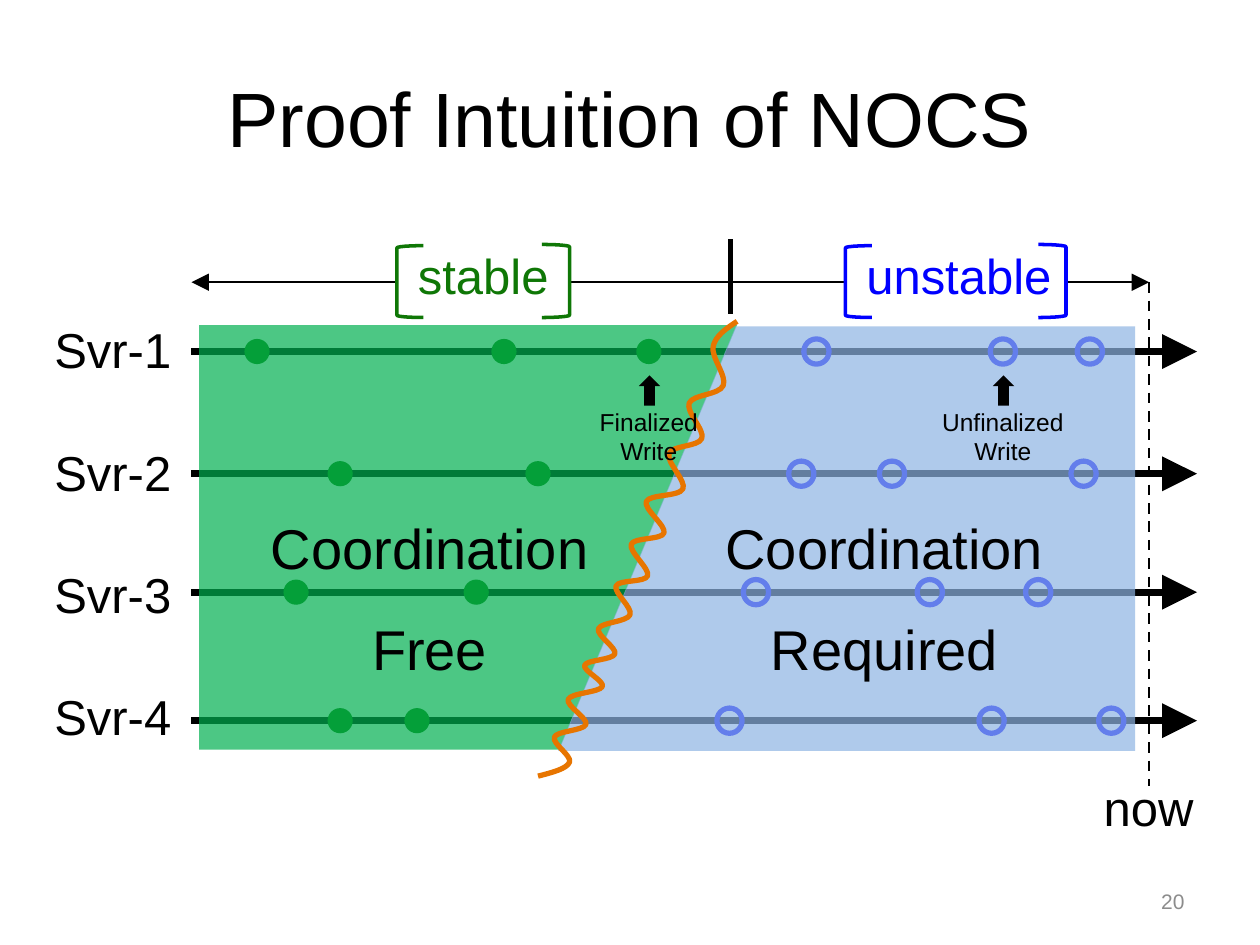
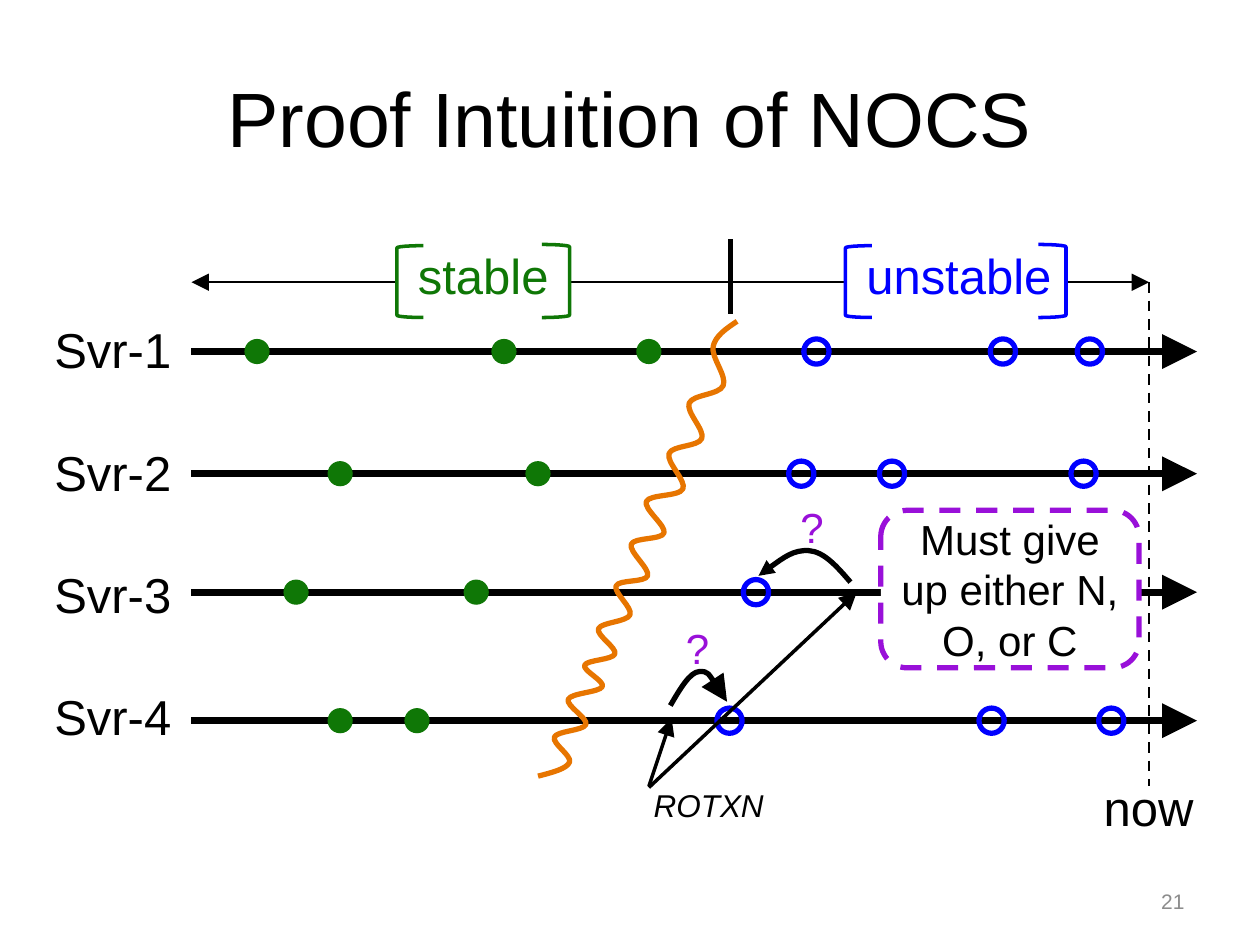
"""Build two slides on the intuition behind the NOCS proof."""
from pptx import Presentation
from pptx.dml import color as col
from pptx.enum import dml, shapes, text
from pptx.oxml import ns
from pptx.util import Pt
from lxml import etree

PX = 9144
FONT = "Arial"
BLACK, WHITE, GREY = "000000", "FFFFFF", "8C8C8C"
GREEN, BLUE, ORANGE, PURPLE = "0F7706", "0000FF", "E77500", "9910D9"
MINT, SKY = "00B050", "8EB4E3"

KIND = shapes.MSO_SHAPE
MID = text.PP_ALIGN.CENTER

ROWS = [279, 376, 470, 572]
DONE = [[204, 400, 515], [270, 427], [235, 378], [270, 331]]
OPEN = [[648, 796, 865], [636, 708, 860], [600, 738, 824], [579, 787, 882]]
WAVE = [(585, 255), (566, 275), (574, 306), (547, 320), (557, 348),
        (531, 360), (542, 388), (513, 398), (527, 423), (501, 432),
        (514, 457), (489, 465), (500, 488), (475, 499), (488, 519),
        (464, 528), (478, 545), (451, 555), (465, 575), (440, 585),
        (452, 605), (427, 616)]


def px(*nums):
    """Turn px lengths into EMU."""
    return [round(n * PX) for n in nums]


def rgb(code):
    """Turn a hex string into a colour."""
    return col.RGBColor.from_string(code)


def sub(node, tag, **attrs):
    """Add a child element with attributes."""
    return etree.SubElement(node, ns.qn(tag), attrs)


def ink(line, code, width, dash=False):
    """Style an outline or a connector line."""
    line.color.rgb = rgb(code)
    line.width = Pt(width)
    if dash:
        line.dash_style = dml.MSO_LINE.DASH


def tip(shape, size):
    """Put a triangle at the far end of a line."""
    line = shape._element.spPr.find(ns.qn("a:ln"))
    sub(line, "a:tailEnd", type="triangle", w=size, len=size)


def paint(shape, fill=None, edge=None, width=3, dash=False):
    """Give a shape its fill and outline, and drop the shadow."""
    shape.shadow.inherit = False
    if fill:
        shape.fill.solid()
        shape.fill.fore_color.rgb = rgb(fill)
    else:
        shape.fill.background()
    if edge:
        ink(shape.line, edge, width, dash)
    else:
        shape.line.fill.background()
    return shape


def form(slide, kind, box, **look):
    """Draw a preset shape."""
    return paint(slide.shapes.add_shape(kind, *px(*box)), **look)


def write(frame, words, size, code=BLACK, align=MID):
    """Fill a text frame with one paragraph per line of words."""
    frame.text = words
    for para in frame.paragraphs:
        para.alignment = align
        para.font.name = FONT
        para.font.size = Pt(size)
        para.font.color.rgb = rgb(code)


def label(slide, words, box, size=28, code=BLACK, wrap=False, align=MID):
    """Add a text box."""
    frame = slide.shapes.add_textbox(*px(*box)).text_frame
    frame.word_wrap = wrap
    write(frame, words, size, code, align)
    return frame


def rule(slide, ends, width, head=False, dash=False):
    """Draw a straight line, with an arrowhead if asked."""
    link = slide.shapes.add_connector(shapes.MSO_CONNECTOR.STRAIGHT, *px(*ends))
    ink(link.line, BLACK, width, dash)
    if head:
        tip(link, "lg")
    sub(link._element.spPr, "a:effectLst")


def trace(slide, spots, close):
    """Join spots into a freeform."""
    pen = slide.shapes.build_freeform(*px(*spots[0]), scale=1.0)
    pen.add_line_segments([px(*spot) for spot in spots[1:]], close=close)
    return pen.convert_to_shape()


def zone(slide, spots, fill):
    """Draw a see-through area."""
    area = paint(trace(slide, spots, True), fill)
    tint = area._element.spPr.find(ns.qn("a:solidFill"))[0]
    sub(tint, "a:alpha", val="70000")


def bend(spots):
    """Give the control and end points of a smooth curve through spots."""
    last = len(spots) - 1
    slope = [[(b - a) / 6 for a, b in zip(spots[i - 1], spots[i + 1])]
             for i in range(1, last)]
    parts = []
    for i in range(last):
        one = [p + s for p, s in zip(spots[i], slope[i - 1])]
        two = [p - s for p, s in zip(spots[i + 1], slope[min(i, last - 2)])]
        if i == 0:
            one = [(p + q) / 2 for p, q in zip(spots[0], two)]
        if i == last - 1:
            two = [(p + q) / 2 for p, q in zip(spots[last], one)]
        parts.append((one, two, spots[i + 1]))
    return parts


def curve(slide, spots, code=BLACK, head=None):
    """Draw a smooth curve through spots."""
    shape = paint(trace(slide, spots, False), edge=code)
    steps = list(shape._element.iter(ns.qn("a:lnTo")))
    for step, part in zip(steps, bend(spots)):
        arc = etree.Element(ns.qn("a:cubicBezTo"))
        for spot in part:
            x, y = px(*spot)
            sub(arc, "a:pt", x=str(x - shape.left), y=str(y - shape.top))
        step.getparent().replace(step, arc)
    if head:
        tip(shape, head)


def dots(slide, rows, **look):
    """Draw the writes of each server as circles."""
    for y, row in zip(ROWS, rows):
        for x in row:
            form(slide, KIND.OVAL, (x - 10, y - 10, 20, 20), **look)


def phase(slide, words, code, left, right, box):
    """Write a phase name between brackets."""
    label(slide, words, box, code=code)
    form(slide, KIND.LEFT_BRACKET, (left, 195, 21, 57), edge=code, width=2)
    form(slide, KIND.RIGHT_BRACKET, (right - 22, 194, 22, 58), edge=code, width=2)


def base(deck, num, late):
    """Add a slide with title, number, servers, time line and writes."""
    slide = deck.slides.add_slide(deck.slide_layouts[5])
    title = slide.shapes.title
    title.left, title.top, title.width, title.height = px(50, 30, 900, 125)
    title.text_frame.vertical_anchor = text.MSO_ANCHOR.MIDDLE
    write(title.text_frame, "Proof Intuition of NOCS", 44)
    foot = label(slide, str(num), (717, 695, 233, 40), 12, GREY, True,
                 text.PP_ALIGN.RIGHT)
    foot.vertical_anchor = text.MSO_ANCHOR.MIDDLE
    for i, y in enumerate(ROWS):
        rule(slide, (152, y, 950, y), 4, head=True)
        label(slide, f"Svr-{i + 1}", (32, 249 + 97 * i, 115, 57))
    rule(slide, (912, 224, 912, 624), 1.5, dash=True)
    label(slide, "now", (863, 612, 97, 57))
    rule(slide, (580, 190, 580, 249), 3)
    for start, end, head in [(580, 452, False), (315, 152, True),
                             (670, 580, False), (847, 912, True)]:
        rule(slide, (start, 224, end, 224), 1, head)
    phase(slide, "stable", GREEN, 315, 452, (318, 190, 131, 57))
    phase(slide, "unstable", BLUE, 671, 846, (673, 190, 176, 57))
    dots(slide, late, edge=BLUE)
    dots(slide, DONE, fill=GREEN)
    return slide


def claim(slide, words, box):
    """Write what a zone needs, in widely spaced lines."""
    for para in label(slide, words, box, 32, wrap=True).paragraphs:
        para.line_spacing = 1.5


def point(slide, words, x, width):
    """Name a write from below with an arrow."""
    label(slide, words, (x - width // 2, 318, width, 57), 14, wrap=True)
    form(slide, KIND.UP_ARROW, (x - 8, 298, 17, 24), fill=BLACK)


def split(deck):
    """Show the zones on both sides of the stable frontier."""
    slide = base(deck, 20, OPEN)
    zone(slide, [(158, 258), (585, 258), (444, 595), (158, 595)], MINT)
    claim(slide, "Coordination\nFree", (197, 376, 288, 161))
    zone(slide, [(584, 259), (901, 259), (901, 596), (443, 596)], SKY)
    claim(slide, "Coordination\nRequired", (558, 376, 288, 161))
    curve(slide, WAVE, ORANGE)
    point(slide, "Finalized Write", 515, 110)
    point(slide, "Unfinalized Write", 796, 120)


def choose(deck):
    """Show a read that meets unstable writes."""
    slide = base(deck, 21, OPEN[:2] + [[600]] + OPEN[3:])
    curve(slide, WAVE, ORANGE)
    rule(slide, (515, 624, 533, 570), 2, head=True)
    rule(slide, (515, 625, 680, 470), 2, head=True)
    curve(slide, [(675, 462), (642, 437), (602, 457)], head="med")
    curve(slide, [(532, 560), (555, 533), (577, 557)], head="lg")
    for x, y in [(625, 393), (534, 489)]:
        label(slide, "?", (x, y, 39, 50), 24, PURPLE)
    read = label(slide, "ROTXN", (492, 619, 141, 40), 18, wrap=True)
    read.paragraphs[0].font.italic = True
    note = form(slide, KIND.ROUNDED_RECTANGLE, (699, 405, 205, 125),
                fill=WHITE, edge=PURPLE, dash=True).text_frame
    note.margin_left, note.margin_right = px(6, 6)
    note.vertical_anchor = text.MSO_ANCHOR.MIDDLE
    note.word_wrap = True
    write(note, "Must give up either N, O, or C", 24)


def main():
    """Build and save the deck."""
    deck = Presentation()
    deck.slide_width, deck.slide_height = px(1000, 750)
    split(deck)
    choose(deck)
    deck.save("out.pptx")


if __name__ == "__main__":
    main()
